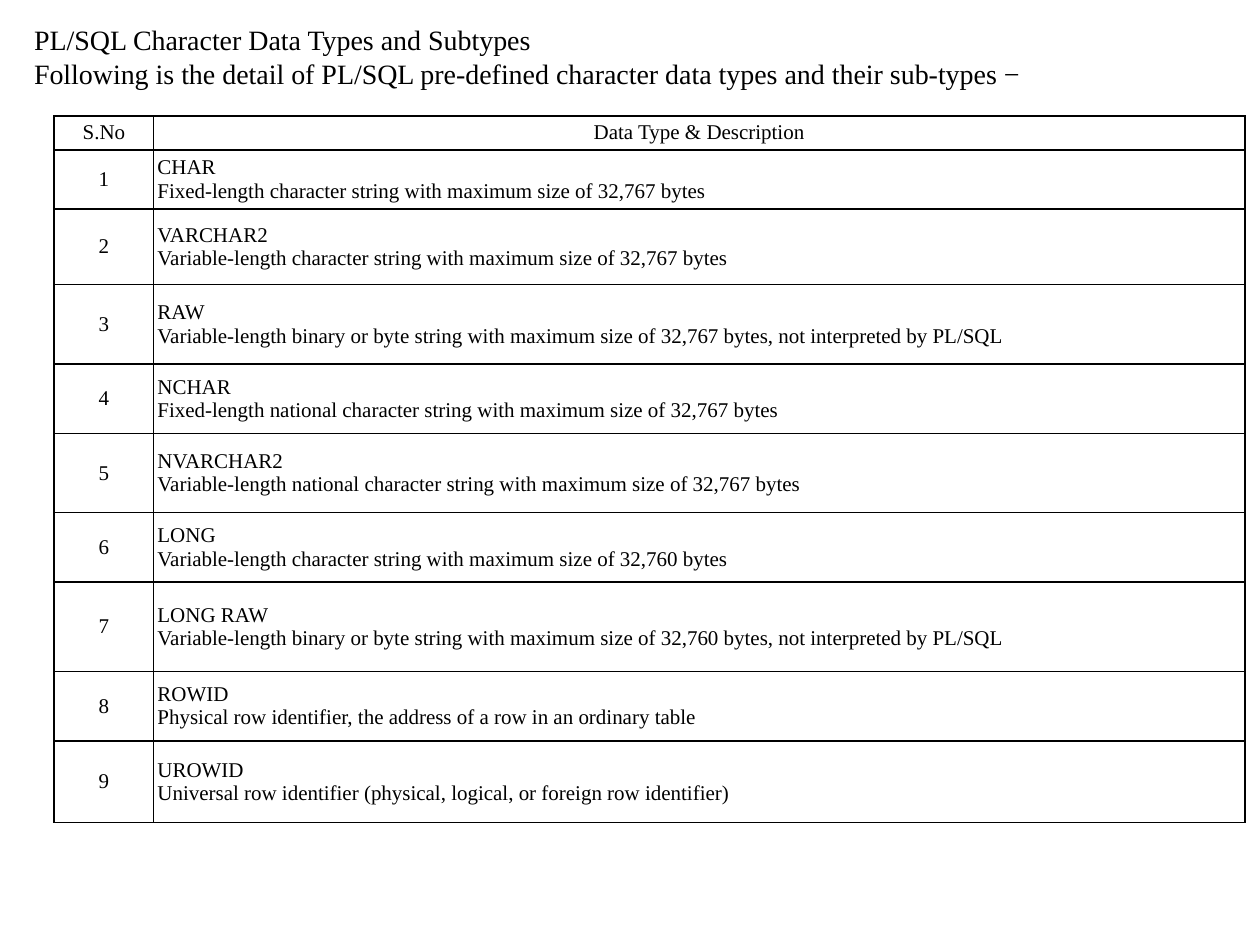
from lxml import etree
from pptx import Presentation
from pptx import util as u
from pptx.dml.color import RGBColor
from pptx.enum import text
from pptx.oxml.ns import qn

BLACK = RGBColor(0x00, 0x00, 0x00)
WHITE = RGBColor(0xFF, 0xFF, 0xFF)

HEADING = [
    "PL/SQL Character Data Types and Subtypes",
    "Following is the detail of PL/SQL pre-defined character data types and their sub-types −",
]
COLUMN_WIDTHS = [0.79, 8.66]
HEADER = ["S.No", "Data Type & Description"]
HEADER_HEIGHT = 0.27
DATA_TYPES = [
    ("CHAR", "Fixed-length character string with maximum size of 32,767 bytes", 0.47),
    ("VARCHAR2", "Variable-length character string with maximum size of 32,767 bytes", 0.6),
    ("RAW", "Variable-length binary or byte string with maximum size of 32,767 bytes, "
            "not interpreted by PL/SQL", 0.63),
    ("NCHAR", "Fixed-length national character string with maximum size of 32,767 bytes", 0.55),
    ("NVARCHAR2", "Variable-length national character string with maximum size of 32,767 bytes", 0.63),
    ("LONG", "Variable-length character string with maximum size of 32,760 bytes", 0.55),
    ("LONG RAW", "Variable-length binary or byte string with maximum size of 32,760 bytes, "
                 "not interpreted by PL/SQL", 0.71),
    ("ROWID", "Physical row identifier, the address of a row in an ordinary table", 0.55),
    ("UROWID", "Universal row identifier (physical, logical, or foreign row identifier)", 0.65),
]


class SlideBuilder:
    font_name = "Times New Roman"
    title_size = u.Pt(16)
    cell_size = u.Pt(12)
    cell_margin = u.Inches(0.03)
    border_width = u.Pt(1)

    def __init__(self, page):
        self.page = page

    def set_lines(self, frame, lines, size, align):
        frame.text = "\n".join(lines)
        for para in frame.paragraphs:
            para.alignment = align
            para.font.name = self.font_name
            para.font.size = size
            para.font.bold = False
            para.font.color.rgb = BLACK

    def title(self, lines, left, top, width, height):
        box = self.page.shapes.title
        box.left, box.top = u.Inches(left), u.Inches(top)
        box.width, box.height = u.Inches(width), u.Inches(height)
        frame = box.text_frame
        frame.word_wrap = True
        frame.auto_size = text.MSO_AUTO_SIZE.SHAPE_TO_FIT_TEXT
        frame.vertical_anchor = text.MSO_ANCHOR.TOP
        self.set_lines(frame, lines, self.title_size, text.PP_ALIGN.LEFT)

    def cell(self, cell, lines, align):
        cell.vertical_anchor = text.MSO_ANCHOR.MIDDLE
        cell.margin_left = cell.margin_right = self.cell_margin
        cell.margin_top = cell.margin_bottom = self.cell_margin
        self.set_lines(cell.text_frame, lines, self.cell_size, align)
        properties = cell._tc.get_or_add_tcPr()
        for side in ("a:lnL", "a:lnR", "a:lnT", "a:lnB"):
            line = etree.SubElement(properties, qn(side), w=str(int(self.border_width)))
            fill = etree.SubElement(line, qn("a:solidFill"))
            etree.SubElement(fill, qn("a:srgbClr"), val=str(BLACK))
        cell.fill.solid()
        cell.fill.fore_color.rgb = WHITE

    def table(self, rows, left, top, widths, heights):
        table = self.page.shapes.add_table(
            len(rows), len(widths), u.Inches(left), u.Inches(top),
            u.Inches(sum(widths)), u.Inches(sum(heights)),
        ).table
        table.first_row = table.horz_banding = False
        for column, width in zip(table.columns, widths):
            column.width = u.Inches(width)
        for row, height, contents in zip(table.rows, heights, rows):
            row.height = u.Inches(height)
            for cell, lines in zip(row.cells, contents):
                centred = len(lines) == 1
                self.cell(cell, lines, text.PP_ALIGN.CENTER if centred else text.PP_ALIGN.LEFT)


def main():
    deck = Presentation()
    deck.slide_width, deck.slide_height = u.Inches(10), u.Inches(7.5)
    builder = SlideBuilder(deck.slides.add_slide(deck.slide_layouts[5]))
    builder.title(HEADING, 0.17, 0.13, 9.53, 0.64)

    rows = [[[label] for label in HEADER]]
    rows += [[[str(number)], [name, description]]
             for number, (name, description, _) in enumerate(DATA_TYPES, 1)]
    heights = [HEADER_HEIGHT] + [height for _, _, height in DATA_TYPES]
    builder.table(rows, 0.43, 0.92, COLUMN_WIDTHS, heights)
    deck.save("out.pptx")


if __name__ == "__main__":
    main()
